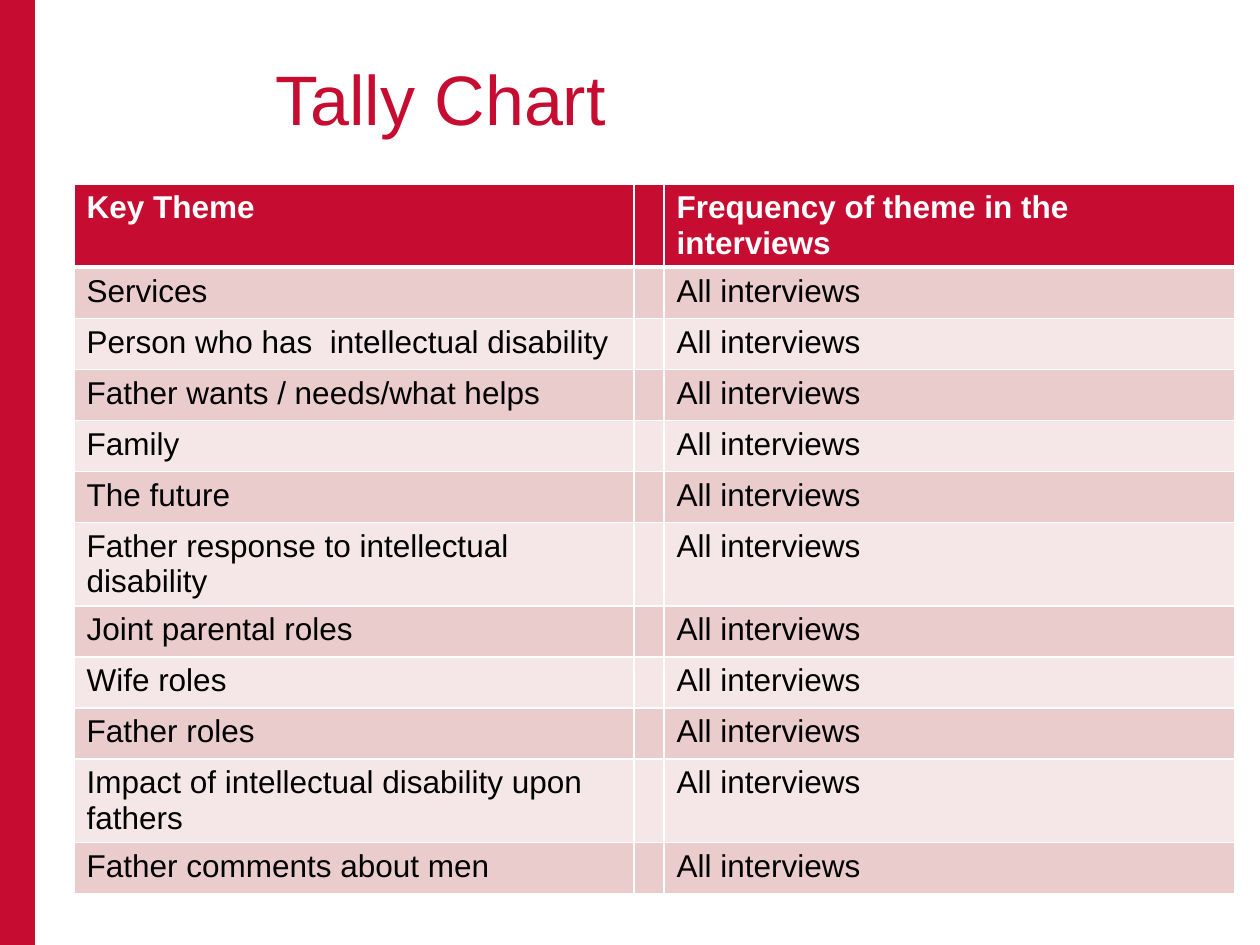
"""Build the tally chart slide of interview themes."""
from lxml import etree
from pptx import Presentation
from pptx import util as u
from pptx.dml.color import RGBColor
from pptx.enum import shapes, text
from pptx.oxml import ns

PX = 914400 // 126
HUES = {"red": "C60C30", "white": "FFFFFF", "black": "000000",
        "dark": "EACCCD", "light": "F5E7E8"}
HEAD = ("Key Theme", "", "Frequency of theme in the interviews")
THEMES = (
    "Services",
    "Person who has  intellectual disability",
    "Father wants / needs/what helps",
    "Family",
    "The future",
    "Father response to intellectual disability",
    "Joint parental roles",
    "Wife roles",
    "Father roles",
    "Impact of intellectual disability upon fathers",
    "Father comments about men",
)
COLS = (560, 30, 571)
ROW = 51


def px(*vals):
    return [u.Emu(v * PX) for v in vals]


def tint(fill, hue):
    fill.solid()
    fill.fore_color.rgb = RGBColor.from_string(HUES[hue])


def write(frame, words, size=18, hue="black", bold=False):
    para = frame.paragraphs[0]
    para.alignment = text.PP_ALIGN.LEFT
    run = para.add_run()
    run.text = words
    font = run.font
    font.name, font.size, font.bold = "Arial", u.Pt(size), bold
    font.color.rgb = RGBColor.from_string(HUES[hue])


def edge(cell, side, width):
    props = cell._tc.get_or_add_tcPr()
    line = etree.SubElement(props, ns.qn(f"a:ln{side}"), w=str(u.Pt(width)))
    fill = etree.SubElement(line, ns.qn("a:solidFill"))
    etree.SubElement(fill, ns.qn("a:srgbClr"), val=HUES["white"])


def add_bar(slide):
    bar = slide.shapes.add_shape(shapes.MSO_SHAPE.RECTANGLE, *px(0, 0, 35, 945))
    bar.shadow.inherit = False
    tint(bar.fill, "red")
    bar.line.fill.background()


def add_title(slide):
    frame = slide.shapes.add_textbox(*px(263, -4, 970, 203)).text_frame
    frame.word_wrap = True
    frame.vertical_anchor = text.MSO_ANCHOR.MIDDLE
    write(frame, "Tally Chart", size=40, hue="red")


def add_tally(slide):
    rows = [HEAD] + [(theme, "", "All interviews") for theme in THEMES]
    box = px(74, 184, sum(COLS), ROW * len(rows))
    table = slide.shapes.add_table(len(rows), len(COLS), *box).table
    for col, width in zip(table.columns, COLS):
        col.width = px(width)[0]
    for i, row in enumerate(rows):
        table.rows[i].height = px(ROW)[0]
        head = i == 0
        back = "red" if head else "dark" if i % 2 else "light"
        for j, words in enumerate(row):
            cell = table.cell(i, j)
            for side in "LRTB":
                thick = (head and side == "B") or (i == 1 and side == "T")
                edge(cell, side, 3 if thick else 1)
            tint(cell.fill, back)
            if words:
                write(cell.text_frame, words, bold=head,
                      hue="white" if head else "black")


def main():
    deck = Presentation()
    deck.slide_width, deck.slide_height = px(1260, 945)
    slide = deck.slides.add_slide(deck.slide_layouts[6])
    add_bar(slide)
    add_tally(slide)
    add_title(slide)
    deck.save("out.pptx")


if __name__ == "__main__":
    main()
